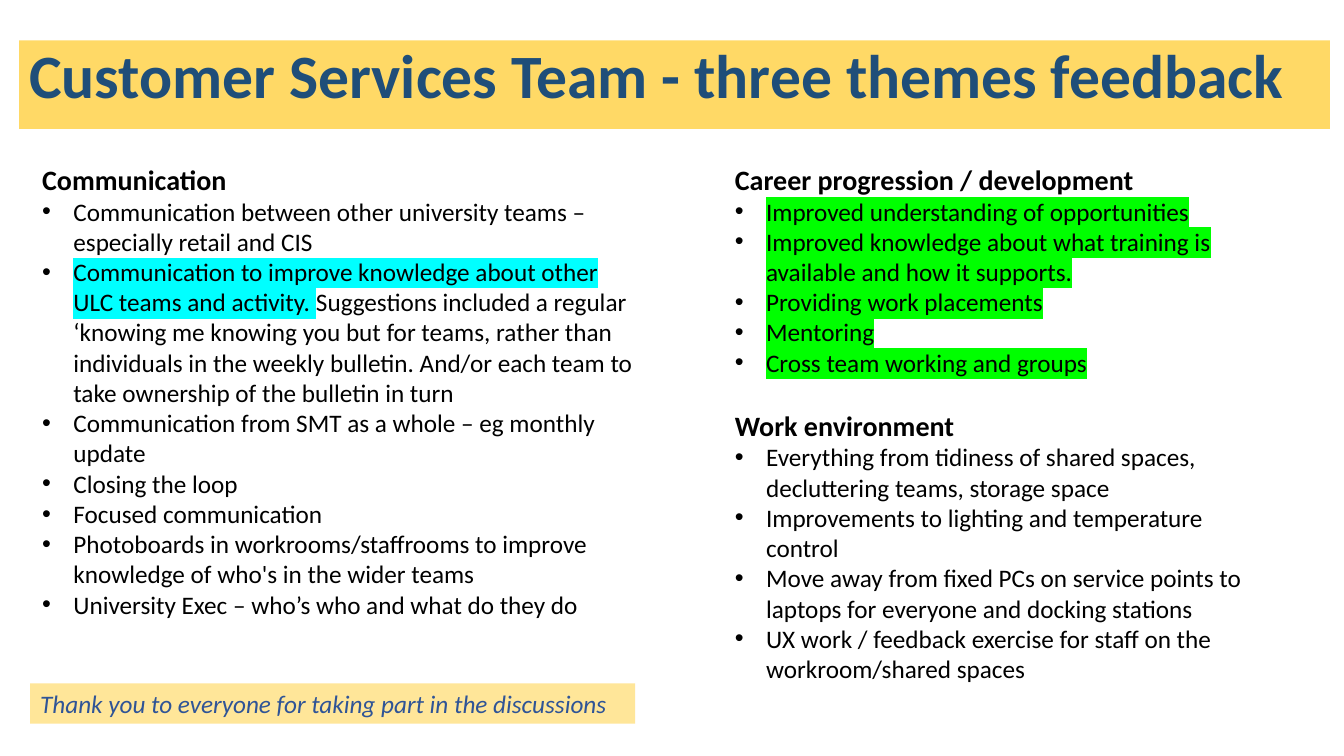
from dataclasses import dataclass

from lxml import etree
from pptx import Presentation
from pptx.dml.color import RGBColor
from pptx.enum.shapes import MSO_SHAPE
from pptx.enum.text import MSO_ANCHOR, PP_ALIGN
from pptx.oxml.ns import qn
from pptx.util import Inches, Pt

RECTANGLE = MSO_SHAPE.RECTANGLE
TOP = MSO_ANCHOR.TOP
LEFT = PP_ALIGN.LEFT


@dataclass(frozen=True)
class Theme:
    font: str = "Calibri"
    title_size: int = 44
    heading_size: int = 20
    body_size: int = 18
    section_gap: int = 22
    text: str = "000000"
    title_text: str = "1F4E79"
    title_fill: str = "FFD966"
    thanks_text: str = "2F5496"
    thanks_fill: str = "FFE699"
    cyan: str = "00FFFF"
    green: str = "00FF00"


THEME = Theme()
BULLET_INDENT = 0.31

# Each theme is a heading and its bullets; each bullet is a list of (text, highlight).
COMMUNICATION = ("Communication", [
    [("Communication between other university teams – especially retail and CIS", None)],
    [("Communication to improve knowledge about other ULC teams and activity. ", THEME.cyan),
     ("Suggestions included a regular ‘knowing me knowing you but for teams, rather than "
      "individuals in the weekly bulletin. And/or each team to take ownership of the "
      "bulletin in turn", None)],
    [("Communication from SMT as a whole – eg monthly update", None)],
    [("Closing the loop", None)],
    [("Focused communication", None)],
    [("Photoboards in workrooms/staffrooms to improve knowledge of who's in the wider teams",
      None)],
    [("University Exec – who’s who and what do they do", None)],
])
CAREER = ("Career progression / development", [
    [(text, THEME.green)] for text in (
        "Improved understanding of opportunities",
        "Improved knowledge about what training is available and how it supports.",
        "Providing work placements",
        "Mentoring",
        "Cross team working and groups",
    )
])
ENVIRONMENT = ("Work environment", [
    [(text, None)] for text in (
        "Everything from tidiness of shared spaces, decluttering teams, storage space",
        "Improvements to lighting and temperature control",
        "Move away from fixed PCs on service points to laptops for everyone and docking stations",
        "UX work / feedback exercise for staff on the workroom/shared spaces",
    )
])


def add_span(para, text, size, color=THEME.text, bold=False, italic=False, highlight=None):
    span = para.add_run()
    span.text = text
    font = span.font
    font.size = Pt(size)
    font.bold = bold
    font.italic = italic
    font.color.rgb = RGBColor.from_string(color)
    font.name = THEME.font
    if highlight:
        marker = etree.Element(qn("a:highlight"))
        etree.SubElement(marker, qn("a:srgbClr"), val=highlight)
        span.font._element.find(qn("a:solidFill")).addnext(marker)


def set_indent(para, margin, bullet=False):
    properties = para._p.get_or_add_pPr()
    hanging = BULLET_INDENT if bullet else 0
    properties.set("marL", str(Inches(margin + hanging)))
    properties.set("indent", str(-Inches(hanging)))
    if bullet:
        etree.SubElement(properties, qn("a:buFont"), typeface="Arial")
        etree.SubElement(properties, qn("a:buChar"), char="•")


def add_banner(page, box, fill, text, size, color, line_spacing=1.0, **style):
    """Add a filled strip holding one line of text."""
    banner = page.shapes.add_shape(RECTANGLE, *map(Inches, box))
    banner.shadow.inherit = False
    banner.fill.solid()
    banner.fill.fore_color.rgb = RGBColor.from_string(fill)
    banner.line.fill.background()
    frame = banner.text_frame
    frame.word_wrap = True
    frame.vertical_anchor = TOP
    para = frame.paragraphs[0]
    para.alignment = LEFT
    para.line_spacing = line_spacing
    add_span(para, text, size, color, **style)


def add_theme_column(page, box, themes, level=0):
    """Stack headings with their bullets, half an inch in for each level."""
    frame = page.shapes.add_textbox(*map(Inches, box)).text_frame
    frame.word_wrap = True
    margin = 0.5 * level
    for index, (heading, bullets) in enumerate(themes):
        para = frame.add_paragraph() if index else frame.paragraphs[0]
        para.level = level
        if index:
            para.space_before = Pt(THEME.section_gap)
        set_indent(para, margin)
        add_span(para, heading, THEME.heading_size, bold=True)
        for spans in bullets:
            para = frame.add_paragraph()
            para.level = level
            set_indent(para, margin, bullet=True)
            for text, highlight in spans:
                add_span(para, text, THEME.body_size, highlight=highlight)


def build_feedback_slide(deck):
    page = deck.slides.add_slide(deck.slide_layouts[6])
    add_banner(page, (0.19, 0.4, 13, 0.88), THEME.title_fill,
               "Customer Services Team - three themes feedback",
               THEME.title_size, THEME.title_text, line_spacing=0.9, bold=True)
    add_theme_column(page, (0.32, 1.56, 6.1, 5.25), [COMMUNICATION])
    add_theme_column(page, (6.69, 1.56, 6.1, 5.79), [CAREER, ENVIRONMENT], level=1)
    add_banner(page, (0.3, 6.78, 6, 0.4), THEME.thanks_fill,
               "Thank you to everyone for taking part in the discussions",
               THEME.body_size, THEME.thanks_text, italic=True)


def main():
    deck = Presentation()
    deck.slide_width = Inches(13.33)
    deck.slide_height = Inches(7.5)
    build_feedback_slide(deck)
    deck.save("out.pptx")


if __name__ == "__main__":
    main()
